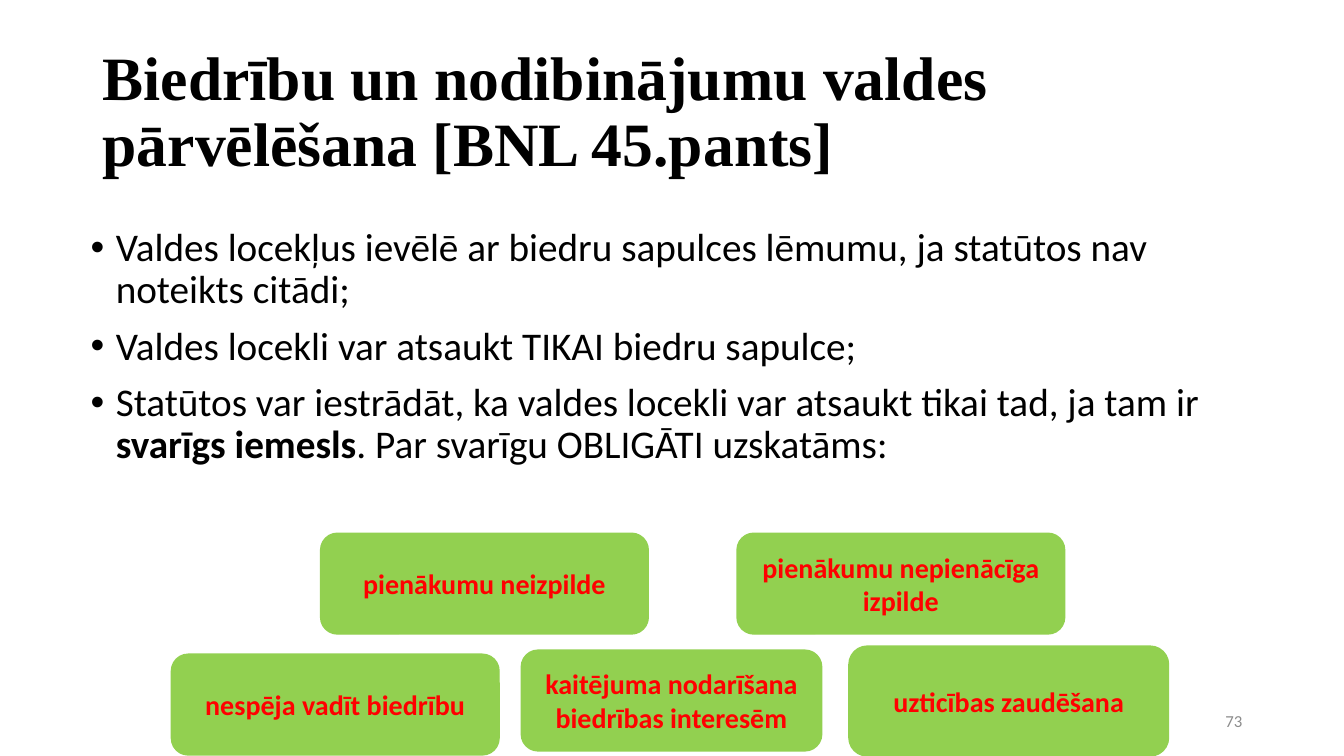
from lxml.etree import SubElement
from pptx import Presentation
from pptx.dml.color import RGBColor
from pptx.enum.shapes import MSO_SHAPE
from pptx.enum.text import MSO_ANCHOR, PP_ALIGN
from pptx.oxml.ns import qn
from pptx.util import Pt

PX = 9144
BLACK = RGBColor(0x00, 0x00, 0x00)
GRAY = RGBColor(0x8C, 0x8C, 0x8C)
GREEN = RGBColor(0x92, 0xD0, 0x50)
RED = RGBColor(0xFF, 0x00, 0x00)


def write(para, text, size=28, font="Calibri", color=BLACK, bold=False):
    run = para.add_run()
    run.text = text
    run.font.size = Pt(size)
    run.font.name = font
    run.font.color.rgb = color
    run.font.bold = bold


class Deck:
    def __init__(self, wide, high):
        self.show = Presentation()
        self.show.slide_width = wide * PX
        self.show.slide_height = high * PX
        self.slide = self.show.slides.add_slide(self.show.slide_layouts[6])

    def frame(self, box, anchor=MSO_ANCHOR.MIDDLE):
        frame = self.slide.shapes.add_textbox(*(n * PX for n in box)).text_frame
        frame.word_wrap = True
        frame.vertical_anchor = anchor
        return frame

    def label(self, box, text, align=PP_ALIGN.LEFT, space=1.0, **style):
        para = self.frame(box).paragraphs[0]
        para.alignment = align
        para.line_spacing = space
        write(para, text, **style)

    def bullets(self, box, items):
        frame = self.frame(box, MSO_ANCHOR.TOP)
        for i, parts in enumerate(items):
            para = frame.add_paragraph() if i else frame.paragraphs[0]
            para.line_spacing = 0.9
            para.space_before = Pt(10)
            props = para._p.get_or_add_pPr()
            props.set("marL", str(25 * PX))
            props.set("indent", str(-25 * PX))
            SubElement(props, qn("a:buFont"), typeface="Arial")
            SubElement(props, qn("a:buChar"), char="•")
            for text, bold in parts:
                write(para, text, bold=bold)

    def card(self, box, text):
        shape = self.slide.shapes.add_shape(
            MSO_SHAPE.ROUNDED_RECTANGLE, *(n * PX for n in box))
        shape.shadow.inherit = False
        shape.fill.solid()
        shape.fill.fore_color.rgb = GREEN
        shape.line.color.rgb = GREEN
        shape.line.width = Pt(1)
        frame = shape.text_frame
        frame.word_wrap = True
        frame.vertical_anchor = MSO_ANCHOR.MIDDLE
        para = frame.paragraphs[0]
        para.alignment = PP_ALIGN.CENTER
        write(para, text, size=20, color=RED, bold=True)


def main():
    deck = Deck(1333, 750)
    deck.label((92, 40, 1150, 145),
               "Biedrību un nodibinājumu valdes pārvēlēšana [BNL 45.pants]",
               space=0.9, size=44, font="Times New Roman", bold=True)
    deck.bullets((80, 221, 1194, 321), [
        [("Valdes locekļus ievēlē ar biedru sapulces lēmumu, "
          "ja statūtos nav noteikts citādi;", False)],
        [("Valdes locekli var atsaukt TIKAI biedru sapulce;", False)],
        [("Statūtos var iestrādāt, ka valdes locekli var atsaukt "
          "tikai tad, ja tam ir ", False),
         ("svarīgs iemesls", True),
         (". Par svarīgu OBLIGĀTI uzskatāms:", False)],
    ])
    deck.label((942, 695, 300, 40), "73", align=PP_ALIGN.RIGHT,
               size=12, color=GRAY)
    for box, text in [
        ((318, 529, 325, 100), "pienākumu neizpilde"),
        ((731, 529, 325, 100), "pienākumu nepienācīga izpilde"),
        ((170, 649, 325, 100), "nespēja vadīt biedrību"),
        ((517, 645, 298, 100), "kaitējuma nodarīšana biedrības interesēm"),
        ((842, 641, 317, 109), "uzticības zaudēšana"),
    ]:
        deck.card(box, text)
    deck.show.save("out.pptx")


if __name__ == "__main__":
    main()
